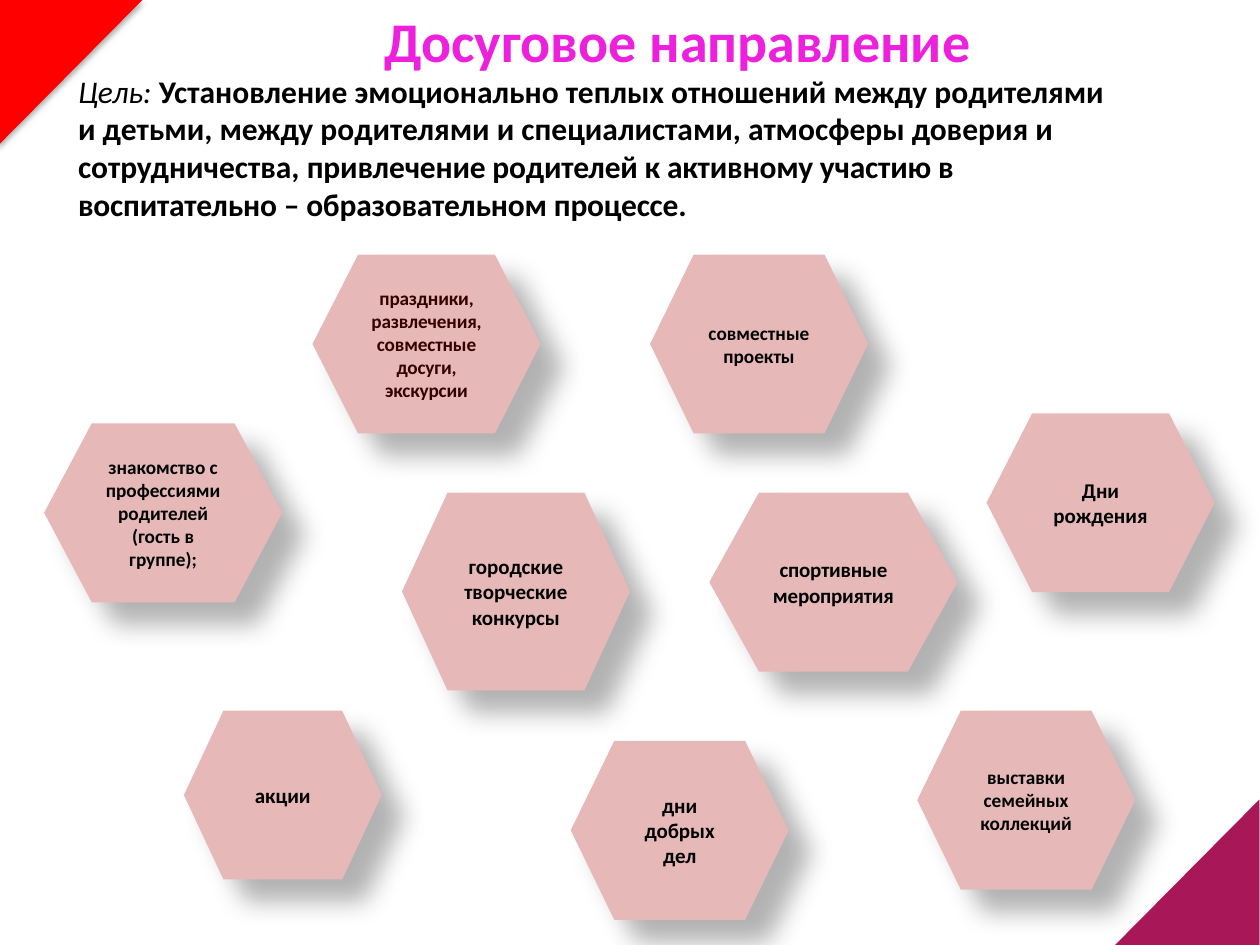
from lxml import etree
from pptx import Presentation
from pptx.dml.color import RGBColor
from pptx.enum.shapes import MSO_SHAPE
from pptx.enum.text import MSO_ANCHOR, PP_ALIGN
from pptx.oxml.ns import qn
from pptx.util import Inches, Pt


def add_run(paragraph, text, size, color, tracking=0, **styles):
    """Append a Calibri run; tracking is letter spacing in points."""
    run = paragraph.add_run()
    run.text = text
    run.font.name = "Calibri"
    run.font.size = Pt(size)
    run.font.color.rgb = RGBColor.from_string(color)
    for attribute, value in styles.items():
        setattr(run.font, attribute, value)
    if tracking:
        run.font._element.set("spc", str(round(tracking * 100)))


def add_shadowed(preset, left, top, width, height, fill, shadow):
    """Add a borderless shape; shadow is (opacity %, blur pt, distance pt, angle)."""
    shape = slide.shapes.add_shape(
        preset, Inches(left), Inches(top), Inches(width), Inches(height))
    shape.fill.solid()
    shape.fill.fore_color.rgb = RGBColor.from_string(fill)
    shape.line.fill.background()
    shape.shadow.inherit = False
    opacity, blur, distance, angle = shadow
    effects = shape._element.spPr.find(qn("a:effectLst"))
    outer = etree.SubElement(
        effects, qn("a:outerShdw"), blurRad=str(Pt(blur)), dist=str(Pt(distance)),
        dir=str(angle * 60000), algn="tl", rotWithShape="0")
    shade = etree.SubElement(outer, qn("a:srgbClr"), val="000000")
    etree.SubElement(shade, qn("a:alpha"), val=str(opacity * 1000))
    return shape


prs = Presentation()
prs.slide_width, prs.slide_height = Inches(10), Inches(7.5)
slide = prs.slides.add_slide(prs.slide_layouts[6])

# Heading and goal
heading = slide.shapes.add_textbox(Inches(2.95), Inches(0), Inches(5.01), Inches(0.64))
heading.text_frame.word_wrap = False
add_run(heading.text_frame.paragraphs[0], "Досуговое направление", 32, "EC20DD", bold=True)

goal = slide.shapes.add_textbox(Inches(0.51), Inches(0.52), Inches(9.49), Inches(2.24))
goal.text_frame.word_wrap = True
goal.text_frame.margin_left = Inches(0.11)
goal.text_frame.margin_right = Inches(1.12)
goal_paragraph = goal.text_frame.paragraphs[0]
add_run(goal_paragraph, "Цель: ", 18, "000000", italic=True)
add_run(goal_paragraph,
        "Установление эмоционально теплых отношений между родителями и детьми, "
        "между родителями и специалистами, атмосферы доверия и сотрудничества, ",
        18, "000000", bold=True)
add_run(goal_paragraph,
        "привлечение родителей к активному участию в "
        "воспитательно – образовательном процессе.",
        18, "000000", tracking=-0.1, bold=True)

# Corner triangles
CORNER_SHADOW = (32, 3.5, 2.2, 90)
for left, top, rotation, fill in [(-0.02, 0, 90, "FF0000"), (8.84, 6.35, 270, "A81859")]:
    corner = add_shadowed(MSO_SHAPE.RIGHT_TRIANGLE, left, top, 1.16, 1.15, fill, CORNER_SHADOW)
    corner.rotation = rotation

# Activities: left, top, width, height, text size, colour, tracking, text
ACTIVITY_SHADOW = (30, 15, 18, 45)
activities = [
    (3.19, 3.91, 1.81, 1.57, 12, "000000", 0, "городские творческие конкурсы"),
    (5.16, 2.02, 1.73, 1.42, 11, "000000", 0, "совместные проекты"),
    (7.28, 5.64, 1.73, 1.42, 11, "000000", 0, "выставки семейных коллекций"),
    (7.83, 3.28, 1.81, 1.42, 12, "000000", 0, "Дни рождения"),
    (0.35, 3.36, 1.89, 1.42, 11, "000000", 0,
     "знакомство с профессиями родителей (гость в группе);"),
    (5.63, 3.91, 1.97, 1.42, 12, "000000", -0.1, "спортивные мероприятия"),
    (2.48, 2.02, 1.81, 1.42, 11, "330000", -0.1,
     "праздники, развлечения, совместные досуги, экскурсии"),
    (1.46, 5.64, 1.57, 1.34, 12, "000000", 0, "акции"),
    (4.53, 5.88, 1.73, 1.42, 12, "000000", 0, "дни добрых дел"),
]
for left, top, width, height, size, color, tracking, text in activities:
    activity = add_shadowed(MSO_SHAPE.FLOWCHART_PREPARATION, left, top, width, height,
                            "E6B9B8", ACTIVITY_SHADOW)
    activity.text_frame.word_wrap = True
    activity.text_frame.vertical_anchor = MSO_ANCHOR.MIDDLE
    paragraph = activity.text_frame.paragraphs[0]
    paragraph.alignment = PP_ALIGN.CENTER
    add_run(paragraph, text, size, color, tracking, bold=True)

prs.save("out.pptx")
